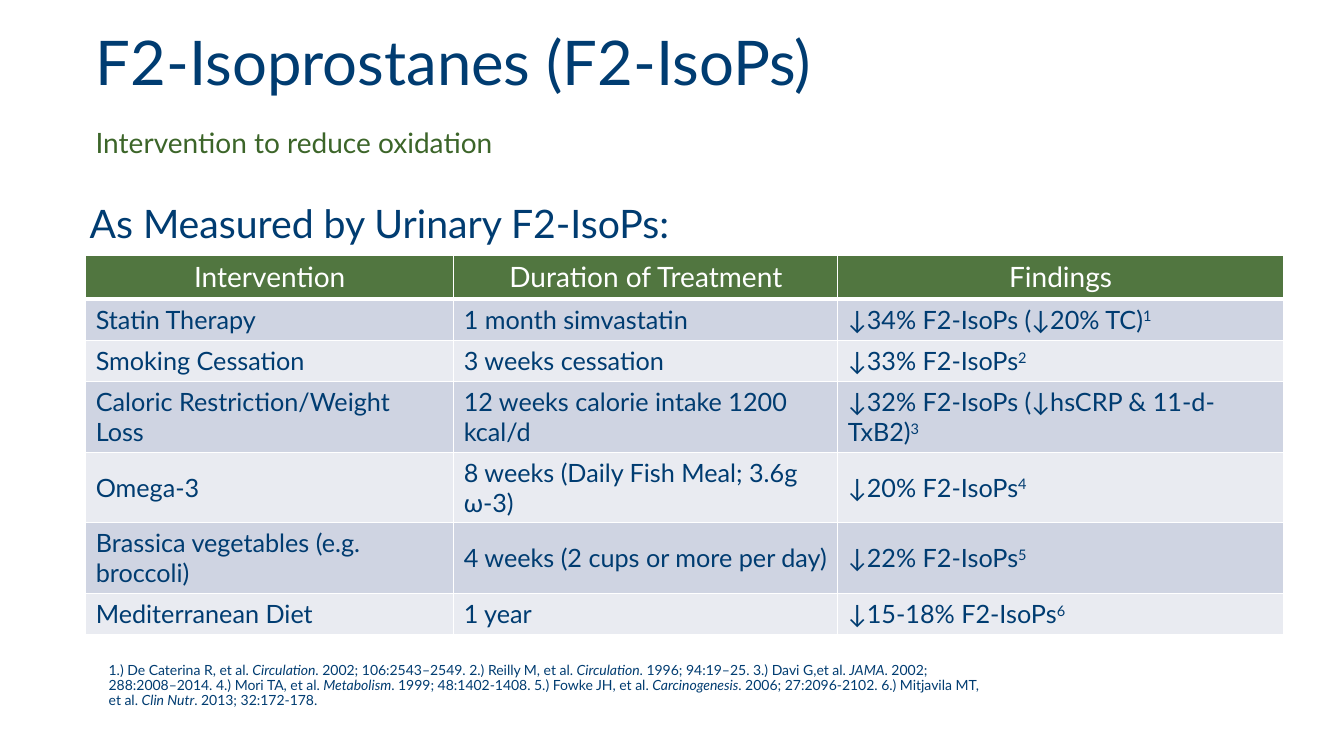
"""Build the slide on interventions that lower urinary F2-isoprostanes."""
from lxml import etree
from pptx import Presentation
from pptx.dml.color import RGBColor
from pptx.enum import text
from pptx.oxml import ns
from pptx.util import Inches, Pt

NAVY, GREEN, HEADER, WHITE = "003C71", "3C6529", "517640", "FFFFFF"
BANDS = ["CFD4E2", "E9EBF1"]

TITLE = "F2-Isoprostanes (F2-IsoPs)"
SUBTITLE = "Intervention to reduce oxidation"
LEAD = "As Measured by Urinary F2-IsoPs:"
REFERENCES = (
    "1.) De Caterina R, et al. *Circulation*. 2002; 106:2543–2549. "
    "2.) Reilly M, et al. *Circulation*. 1996; 94:19–25. "
    "3.) Davi G,et al. *JAMA*. 2002; 288:2008–2014. "
    "4.) Mori TA, et al. *Metabolism*. 1999; 48:1402-1408. "
    "5.) Fowke JH, et al. *Carcinogenesis*. 2006; 27:2096-2102. "
    "6.) Mitjavila MT, et al. *Clin Nutr*. 2013; 32:172-178."
)
HEADINGS = ("Intervention", "Duration of Treatment", "Findings")
STUDIES = [
    ("Statin Therapy", "1 month simvastatin", "↓34% F2-IsoPs (↓20% TC)"),
    ("Smoking Cessation", "3 weeks cessation", "↓33% F2-IsoPs"),
    ("Caloric Restriction/Weight Loss", "12 weeks calorie intake 1200 kcal/d",
     "↓32% F2-IsoPs (↓hsCRP & 11-d-TxB2)"),
    ("Omega-3", "8 weeks (Daily Fish Meal; 3.6g ω-3)", "↓20% F2-IsoPs"),
    ("Brassica vegetables (e.g. broccoli)", "4 weeks (2 cups or more per day)",
     "↓22% F2-IsoPs"),
    ("Mediterranean Diet", "1 year", "↓15-18% F2-IsoPs"),
]
COLUMN_WIDTHS = [3.65, 3.81, 4.42]
ROW_HEIGHT = 0.41


def color(value):
    return RGBColor.from_string(value)


def write(frame, content, size, fill=NAVY, align=text.PP_ALIGN.LEFT,
          spacing=None, note=None):
    """Write text, with *italic* parts and an optional superscript note."""
    para = frame.paragraphs[0]
    para.alignment = align
    if spacing:
        para.line_spacing = spacing
    parts = [(part, index % 2 == 1) for index, part in enumerate(content.split("*"))]
    if note:
        parts.append((note, False))
    for part, italic in parts:
        span = para.add_run()
        span.text = part
        span.font.name = "Lato"
        span.font.size = Pt(size)
        span.font.color.rgb = color(fill)
        if italic:
            span.font.italic = True
    if note:
        span.font._element.set("baseline", "30000")


def place(box, left, top, width, height, anchor=text.MSO_ANCHOR.TOP):
    """Position a box and return its wrapped text frame."""
    box.left, box.top = Inches(left), Inches(top)
    box.width, box.height = Inches(width), Inches(height)
    frame = box.text_frame
    frame.auto_size = text.MSO_AUTO_SIZE.NONE
    frame.word_wrap = True
    frame.vertical_anchor = anchor
    return frame


def add_borders(cell, bottom):
    """Draw white lines round a table cell."""
    properties = cell._tc.get_or_add_tcPr()
    for side, width in (("lnL", 1), ("lnR", 1), ("lnT", 1), ("lnB", bottom)):
        line = etree.SubElement(properties, ns.qn(f"a:{side}"), w=str(Pt(width)))
        fill = etree.SubElement(line, ns.qn("a:solidFill"))
        etree.SubElement(fill, ns.qn("a:srgbClr"), val=WHITE)


def add_studies(page):
    """Add the table of interventions."""
    rows = [HEADINGS] + STUDIES
    table = page.shapes.add_table(
        len(rows), len(HEADINGS), Inches(0.85), Inches(2.53),
        Inches(sum(COLUMN_WIDTHS)), Inches(ROW_HEIGHT * len(rows))).table
    for column, width in zip(table.columns, COLUMN_WIDTHS):
        column.width = Inches(width)
    for r, row in enumerate(rows):
        table.rows[r].height = Inches(ROW_HEIGHT)
        for c, content in enumerate(row):
            cell = table.cell(r, c)
            add_borders(cell, 1 if r else 3)
            cell.fill.solid()
            if r == 0:
                cell.fill.fore_color.rgb = color(HEADER)
                write(cell.text_frame, content, 20, WHITE, text.PP_ALIGN.CENTER)
            else:
                cell.fill.fore_color.rgb = color(BANDS[(r - 1) % 2])
                cell.vertical_anchor = text.MSO_ANCHOR.MIDDLE
                write(cell.text_frame, content, 18, note=str(r) if c == 2 else None)


def main():
    deck = Presentation()
    deck.slide_width, deck.slide_height = Inches(13.33), Inches(7.5)
    page = deck.slides.add_slide(deck.slide_layouts[5])

    title = place(page.shapes.title, 0.85, 0.17, 12.32, 0.96, text.MSO_ANCHOR.MIDDLE)
    write(title, TITLE, 44, spacing=0.9)

    def add_text(content, size, *area, fill=NAVY, anchor=text.MSO_ANCHOR.TOP):
        frame = place(page.shapes.add_textbox(0, 0, 0, 0), *area, anchor)
        write(frame, content, size, fill, spacing=0.9)
        return frame

    add_text(LEAD, 28, 0.79, 1.98, 12, 0.5)
    add_text(SUBTITLE, 20, 0.85, 1.23, 12.32, 0.41, fill=GREEN)
    references = add_text(REFERENCES, 10, 0.98, 6.63, 8.84, 0.4,
                          anchor=text.MSO_ANCHOR.BOTTOM)
    references.margin_top = references.margin_right = references.margin_bottom = 0
    add_studies(page)
    deck.save("out.pptx")


if __name__ == "__main__":
    main()
